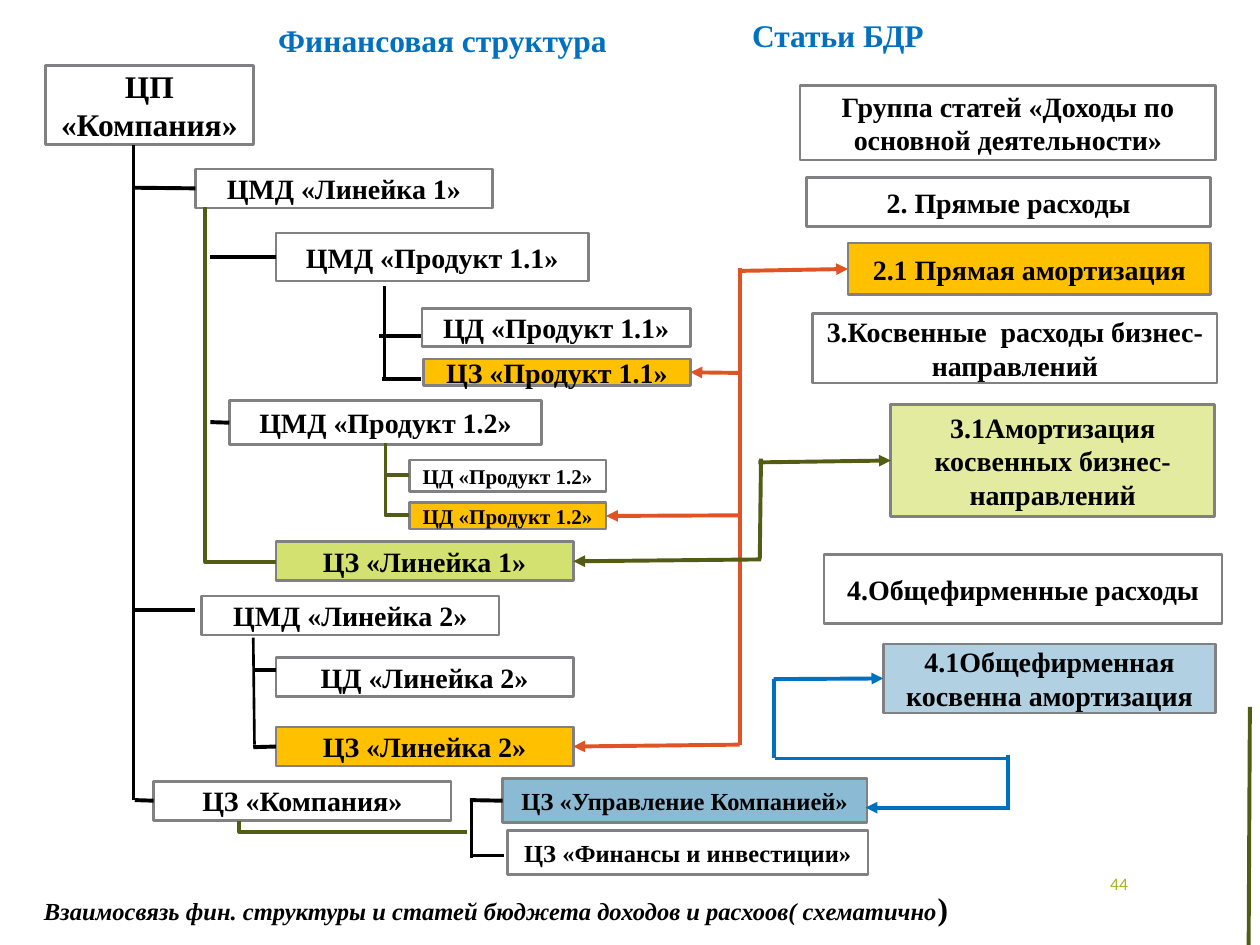
"""Build the slide that links the financial structure to the budget articles."""
from lxml.etree import SubElement
from pptx import Presentation
from pptx.dml.color import RGBColor
from pptx.enum.shapes import MSO_CONNECTOR as Connector, MSO_SHAPE as Shape
from pptx.enum.text import MSO_ANCHOR as Anchor, PP_ALIGN as Align
from pptx.oxml.ns import qn
from pptx.util import Inches, Pt

BLACK = RGBColor(0x00, 0x00, 0x00)
WHITE = RGBColor(0xFF, 0xFF, 0xFF)
GRAY = RGBColor(0x81, 0x81, 0x83)
AMBER = RGBColor(0xFF, 0xC0, 0x00)
LIME = RGBColor(0xD3, 0xE1, 0x71)
PALE_LIME = RGBColor(0xE2, 0xEB, 0xA0)
SKY = RGBColor(0x8A, 0xBA, 0xD4)
PALE_SKY = RGBColor(0xB1, 0xD1, 0xE3)
BLUE = RGBColor(0x00, 0x70, 0xC0)
ORANGE = RGBColor(0xDF, 0x53, 0x27)
OLIVE = RGBColor(0x53, 0x5C, 0x14)
GREEN = RGBColor(0xA6, 0xB7, 0x27)
SERIF = "Times New Roman"
LEFT, RIGHT = 1, 3

presentation = Presentation()
presentation.slide_width = Inches(10)
presentation.slide_height = Inches(7.5)
slide = presentation.slides.add_slide(presentation.slide_layouts[6])
COLUMN = presentation.slide_width / 100
ROW = presentation.slide_height / 75


def place(columns_and_rows):
    """Turn grid positions (column, row, column, row) into lengths."""
    return [round(value * unit) for value, unit in zip(columns_and_rows, (COLUMN, ROW) * 2)]


def add_run(paragraph, text, size, color=BLACK, font=SERIF, bold=True, italic=False):
    """Append one formatted run."""
    run = paragraph.add_run()
    run.text = text
    run.font.name, run.font.size = font, Pt(size)
    run.font.bold, run.font.italic = bold, italic
    run.font.color.rgb = color


boxes = [
    ("company", "ЦП «Компания»", (3.6, 5.2, 16.5, 6.3), WHITE, 18),
    ("line 1", "ЦМД «Линейка 1»", (15.5, 13.4, 23.6, 3.1), WHITE, 16),
    ("product 1.1", "ЦМД «Продукт 1.1»", (21.9, 18.5, 24.8, 3.8), WHITE, 16),
    ("income 1.1", "ЦД «Продукт 1.1»", (33.5, 24.5, 21.3, 3), WHITE, 16),
    ("cost 1.1", "ЦЗ «Продукт 1.1»", (33.6, 28.5, 21.2, 2.1), AMBER, 16),
    ("product 1.2", "ЦМД «Продукт 1.2»", (18.2, 31.8, 24.8, 3.5), None, 16),
    ("income 1.2", "ЦД «Продукт 1.2»", (32.5, 36.5, 15.6, 2.5), WHITE, 12),
    ("cost 1.2", "ЦД «Продукт 1.2»", (32.5, 39.9, 15.6, 2.1), AMBER, 12),
    ("line 1 cost", "ЦЗ «Линейка 1»", (21.9, 43, 23.6, 3.1), LIME, 16),
    ("line 2", "ЦМД «Линейка 2»", (16, 47.3, 23.6, 3.1), WHITE, 16),
    ("line 2 income", "ЦД «Линейка 2»", (21.9, 52.2, 23.6, 3.1), WHITE, 16),
    ("line 2 cost", "ЦЗ «Линейка 2»", (21.9, 57.7, 23.6, 3.1), AMBER, 16),
    ("company cost", "ЦЗ «Компания»", (12.2, 62, 23.6, 3.1), WHITE, 16),
    ("management", "ЦЗ «Управление Компанией»", (39.9, 61.8, 28.9, 3.5), SKY, 14),
    ("finance", "ЦЗ «Финансы и инвестиции»", (40.3, 65.9, 28.6, 3.5), WHITE, 14),
    ("revenue", "Группа статей «Доходы по основной деятельности»",
     (63.5, 6.8, 33, 5.9), WHITE, 16),
    ("direct", "2. Прямые расходы", (64, 14.1, 32.1, 3.9), WHITE, 16),
    ("direct amortization", "2.1 Прямая амортизация", (67.3, 19.3, 28.8, 4.1), AMBER, 16),
    ("indirect", "3.Косвенные  расходы бизнес-направлений",
     (64.5, 24.9, 32.1, 5.5), WHITE, 16),
    ("indirect amortization", "3.1Амортизация косвенных бизнес-направлений",
     (70.7, 32.1, 25.7, 8.9), PALE_LIME, 16),
    ("general", "4.Общефирменные расходы", (65.4, 44, 31.6, 5.5), WHITE, 16),
    ("general amortization", "4.1Общефирменная косвенна амортизация",
     (70.1, 51.1, 26.4, 5.5), PALE_SKY, 16),
]
box_shapes = {}
for name, text, position, fill, size in boxes:
    shape = slide.shapes.add_shape(Shape.RECTANGLE, *place(position))
    shape.shadow.inherit = False
    if fill is None:
        shape.fill.background()
    else:
        shape.fill.solid()
        shape.fill.fore_color.rgb = fill
    shape.line.color.rgb, shape.line.width = GRAY, Pt(1.5)
    shape.text_frame.word_wrap = True
    shape.text_frame.vertical_anchor = Anchor.MIDDLE
    paragraph = shape.text_frame.paragraphs[0]
    paragraph.alignment = Align.CENTER
    add_run(paragraph, text, size)
    box_shapes[name] = shape

plain_lines = [
    ((10.6, 11.5, 10.6, 63.5), BLACK, 1.5),
    ((30.1, 26.7, 33.4, 26.7), BLACK, 2.25),
    ((30.3, 30.1, 33.4, 30.1), BLACK, 2.25),
    ((30.5, 22.7, 30.5, 30.1), BLACK, 1.5),
    ((10.6, 48.4, 15.5, 48.4), BLACK, 2.25),
    ((20.1, 50.6, 20.2, 59.1), BLACK, 1.5),
    ((20.2, 53.2, 21.9, 53.2), BLACK, 2.25),
    ((37.4, 63.5, 37.4, 68.1), BLACK, 1.5),
    ((37.5, 67.9, 40, 67.9), BLACK, 2.25),
    ((58.7, 21.3, 58.7, 59.1), ORANGE, 2.25),
    ((60.4, 36.4, 60.3, 44.4), OLIVE, 2.25),
    ((99.2, 56.1, 99.1, 75), OLIVE, 2.25),
    ((61.4, 53.9, 61.4, 60.2), BLUE, 2.25),
    ((80, 60.2, 61.5, 60.2), BLUE, 2.25),
    ((80, 59.9, 80, 64.3), BLUE, 2.25),
]
joined_lines = [
    ((10.6, 14.9, 15.5, 14.9), BLACK, False, "line 1", LEFT),
    ((16.7, 20.4, 21.9, 20.4), BLACK, False, "product 1.1", LEFT),
    ((16.7, 33.5, 18.2, 33.5), BLACK, False, "product 1.2", LEFT),
    ((20.1, 59.3, 21.9, 59.3), BLACK, False, "line 2 cost", LEFT),
    ((10.7, 63.5, 12.2, 63.5), BLACK, False, "company cost", LEFT),
    ((37.3, 63.5, 39.8, 63.5), BLACK, False, "management", LEFT),
    ((58.7, 21.5, 67.3, 21.4), ORANGE, True, "direct amortization", LEFT),
    ((58.7, 29.6, 54.9, 29.6), ORANGE, True, "cost 1.1", RIGHT),
    ((58.7, 40.9, 48.1, 40.9), ORANGE, True, "cost 1.2", RIGHT),
    ((58.7, 59.1, 45.5, 59.1), ORANGE, True, "line 2 cost", RIGHT),
    ((60.2, 36.7, 70.7, 36.6), OLIVE, True, "indirect amortization", LEFT),
    ((60.4, 44.4, 45.5, 44.4), OLIVE, True, "line 1 cost", RIGHT),
    ((61.4, 53.9, 70.1, 53.9), BLUE, True, "general amortization", LEFT),
    ((80.2, 64.1, 68.7, 64.1), BLUE, True, None, None),
]
elbows = [
    (32.5, 40.9, 30.6, 35.2),
    (32.5, 37.7, 30.6, 35.2),
    (21.9, 44.6, 16.3, 16.4),
    (37.1, 66, 19, 65.2),
]
links = [(Connector.STRAIGHT, ends, color, width, False, None, None)
         for ends, color, width in plain_lines]
links += [(Connector.STRAIGHT, ends, color, 2.25, arrow, target, side)
          for ends, color, arrow, target, side in joined_lines]
links += [(Connector.ELBOW, ends, OLIVE, 2.25, False, None, None) for ends in elbows]

for kind, ends, color, width, arrow, target, side in links:
    connector = slide.shapes.add_connector(kind, *place(ends))
    connector.line.color.rgb, connector.line.width = color, Pt(width)
    if target:
        connector.end_connect(box_shapes[target], side)
    properties = connector._element.spPr
    if kind == Connector.ELBOW:
        properties.find(qn("a:prstGeom")).set("prst", "bentConnector2")
    if arrow:
        SubElement(properties.find(qn("a:ln")), qn("a:tailEnd"), type="triangle")
    SubElement(properties, qn("a:effectLst"))

headings = [
    ("Финансовая структура", (21.1, 1.2, 28.4, 4)),
    ("Статьи БДР", (58.7, 0.8, 15.8, 4)),
]
for text, position in headings:
    heading = slide.shapes.add_textbox(*place(position))
    heading.text_frame.word_wrap = False
    add_run(heading.text_frame.paragraphs[0], text, 18, BLUE)

caption = slide.shapes.add_textbox(*place((2.5, 70.1, 76.6, 4)))
caption.text_frame.word_wrap = True
paragraph = caption.text_frame.paragraphs[0]
add_run(paragraph, "Взаимосвязь фин. структуры и статей бюджета доходов и расхоов( схематично",
        14, italic=True)
add_run(paragraph, ")", 18)

page_number = slide.shapes.add_textbox(*place((76.5, 68.1, 14, 4)))
page_number.text_frame.word_wrap = True
page_number.text_frame.vertical_anchor = Anchor.MIDDLE
paragraph = page_number.text_frame.paragraphs[0]
paragraph.alignment = Align.RIGHT
add_run(paragraph, "44", 10, GREEN, "Calibri", bold=False)

presentation.save("out.pptx")
